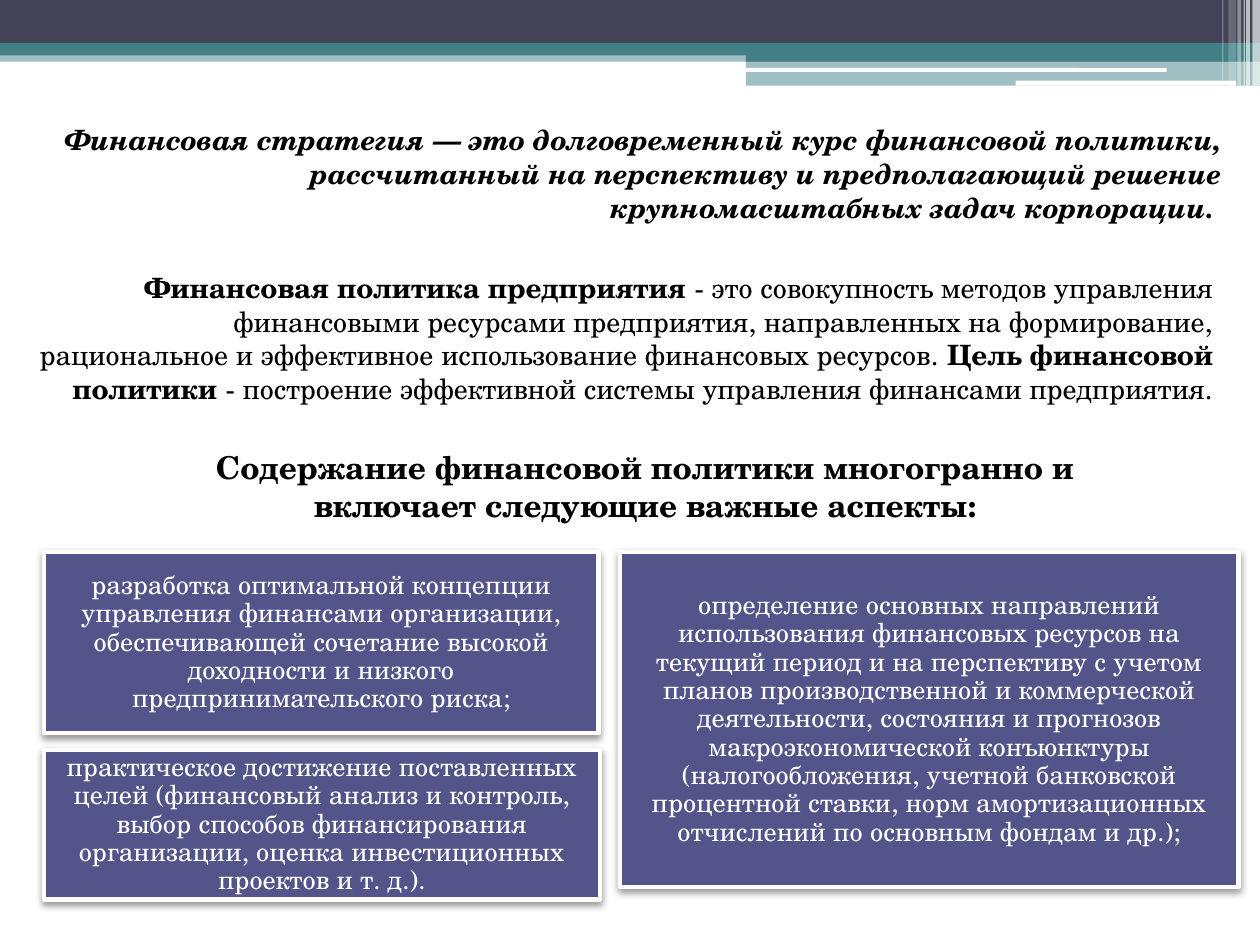
from lxml import etree
from pptx import Presentation
from pptx.dml.color import RGBColor
from pptx.enum.shapes import MSO_SHAPE
from pptx.enum.text import MSO_ANCHOR, MSO_AUTO_SIZE, PP_ALIGN
from pptx.oxml.ns import qn
from pptx.util import Inches, Pt

RECT, ROUND = MSO_SHAPE.RECTANGLE, MSO_SHAPE.ROUNDED_RECTANGLE
TOP, MIDDLE = MSO_ANCHOR.TOP, MSO_ANCHOR.MIDDLE
RIGHT, CENTER = PP_ALIGN.RIGHT, PP_ALIGN.CENTER
GROW = MSO_AUTO_SIZE.SHAPE_TO_FIT_TEXT

WHITE = RGBColor(0xFF, 0xFF, 0xFF)
BLACK = RGBColor(0x00, 0x00, 0x00)
DARK = RGBColor(0x42, 0x44, 0x56)
TEAL = RGBColor(0x43, 0x80, 0x86)
VIOLET = RGBColor(0x53, 0x54, 0x8A)
FONT = "TeX Gyre Schola"

# Grid of 100 columns by 75 rows
WIDTH, HEIGHT = Inches(10), Inches(7.5)
COL, ROW = WIDTH / 100, HEIGHT / 75

# Header bands: left, top, width, height, colour, opacity in percent
BANDS = [
    (0, 4, 100, 0.9, TEAL, 50),
    (0, 0, 100, 3.4, DARK, 100),
    (0, 3.4, 100, 1, TEAL, 100),
    (59.2, 3.9, 40.8, 1, TEAL, 100),
    (59.2, 4.8, 40.8, 2, TEAL, 50),
]
# White rules over the bands: left, top, width, height
RULES = [(59.1, 5.4, 33.5, 0.3), (80.6, 6.4, 17.5, 0.4)]
# Translucent stripes at the right edge: left, width, height, opacity
STRIPES = [
    (99.4, 0.6, 6.8, 65), (98.9, 0.3, 6.8, 65), (98.7, 0.1, 6.8, 60),
    (98.2, 0.3, 6.8, 40), (97.5, 0.6, 6.4, 20), (97, 0.1, 6.4, 30),
]

STRATEGY = [
    ("Финансовая стратегия — это долговременный курс финансовой политики, "
     "рассчитанный на перспективу и предполагающий решение "
     "крупномасштабных задач корпорации. ", {"bold": True, "italic": True}),
]
POLICY = [
    ("Финансовая политика предприятия ", {"bold": True}),
    ("- это совокупность методов управления финансовыми ресурсами предприятия, "
     "направленных на формирование, рациональное и эффективное использование "
     "финансовых ресурсов. ", {}),
    ("Цель финансовой политики ", {"bold": True}),
    ("- построение эффективной системы управления финансами предприятия.", {}),
]
HEADING = [
    ("Содержание финансовой политики многогранно и включает следующие "
     "важные аспекты:", {"bold": True}),
]
# Aspect cards: place on the grid, text
CARDS = [
    ((3.5, 43.8, 44, 14.4),
     "разработка оптимальной концепции управления финансами организации, "
     "обеспечивающей сочетание высокой доходности и низкого "
     "предпринимательского риска;"),
    ((49.2, 43.8, 49.1, 26.6),
     "определение основных направлений использования финансовых ресурсов на "
     "текущий период и на перспективу с учетом планов производственной и "
     "коммерческой деятельности, состояния и прогнозов макроэкономической "
     "конъюнктуры (налогообложения, учетной банковской процентной ставки, "
     "норм амортизационных отчислений по основным фондам и др.);"),
    ((3.5, 59.5, 44.1, 11.9),
     "практическое достижение поставленных целей (финансовый анализ и "
     "контроль, выбор способов финансирования организации, оценка "
     "инвестиционных проектов и т. д.)."),
]


def place(left, top, width, height):
    return (round(left * COL), round(top * ROW),
            round(width * COL), round(height * ROW))


def set_all(obj, values):
    for name, value in values.items():
        setattr(obj, name, value)


def add_block(s, kind, box, color, opacity=100):
    sp = s.shapes.add_shape(kind, *place(*box))
    sp.shadow.inherit = False
    sp.fill.solid()
    sp.fill.fore_color.rgb = color
    sp.line.fill.background()
    if opacity < 100:
        clr = sp.fill._xPr.find(".//" + qn("a:srgbClr"))
        etree.SubElement(clr, qn("a:alpha"), val=str(opacity * 1000))
    return sp


def write(sp, runs, size, color, align, frame):
    tf = sp.text_frame
    set_all(tf, {"word_wrap": True, **frame})
    p = tf.paragraphs[0]
    p.alignment = align
    for text, style in runs:
        r = p.add_run()
        r.text = text
        set_all(r.font, {"name": FONT, "size": Pt(size), **style})
        r.font.color.rgb = color
    return p


def add_text(s, box, runs, size, align, anchor=TOP):
    sp = s.shapes.add_textbox(*place(*box))
    write(sp, runs, size, BLACK, align,
          {"vertical_anchor": anchor, "auto_size": GROW})


def add_shadow(sp):
    effects = sp._element.spPr.find(qn("a:effectLst"))
    shadow = etree.SubElement(
        effects, qn("a:outerShdw"), blurRad=str(Pt(4.1)), dist=str(Pt(2)),
        dir=str(90 * 60000), algn="ctr", rotWithShape="0")
    clr = etree.SubElement(shadow, qn("a:srgbClr"), val=str(BLACK))
    etree.SubElement(clr, qn("a:alpha"), val="40000")


def add_card(s, box, text):
    sp = add_block(s, RECT, box, VIOLET)
    sp.line.color.rgb = WHITE
    sp.line.width = Pt(2.5)
    add_shadow(sp)
    margins = {f"margin_{side}": Inches(0.06)
               for side in ("left", "top", "right", "bottom")}
    p = write(sp, [(text, {})], 15, WHITE, CENTER,
              {"vertical_anchor": MIDDLE, **margins})
    p.line_spacing = 0.9


def add_header(s):
    for *box, color, opacity in BANDS:
        add_block(s, RECT, box, color, opacity)
    for box in RULES:
        add_block(s, ROUND, box, WHITE)
    for left, width, height, opacity in STRIPES:
        add_block(s, RECT, (left, 0, width, height), WHITE, opacity)


def main():
    prs = Presentation()
    prs.slide_width, prs.slide_height = WIDTH, HEIGHT
    s = prs.slides.add_slide(prs.slide_layouts[6])

    add_header(s)

    # Definitions
    add_text(s, (3.5, 9.2, 94.5, 9.1), STRATEGY, 16, RIGHT, MIDDLE)
    add_text(s, (2, 21, 95.3, 11.8), POLICY, 16, RIGHT)

    # Aspects of the policy
    for box, text in CARDS:
        add_card(s, box, text)
    add_text(s, (13, 35.1, 76.4, 7.1), HEADING, 18, CENTER)

    prs.save("out.pptx")


if __name__ == "__main__":
    main()
